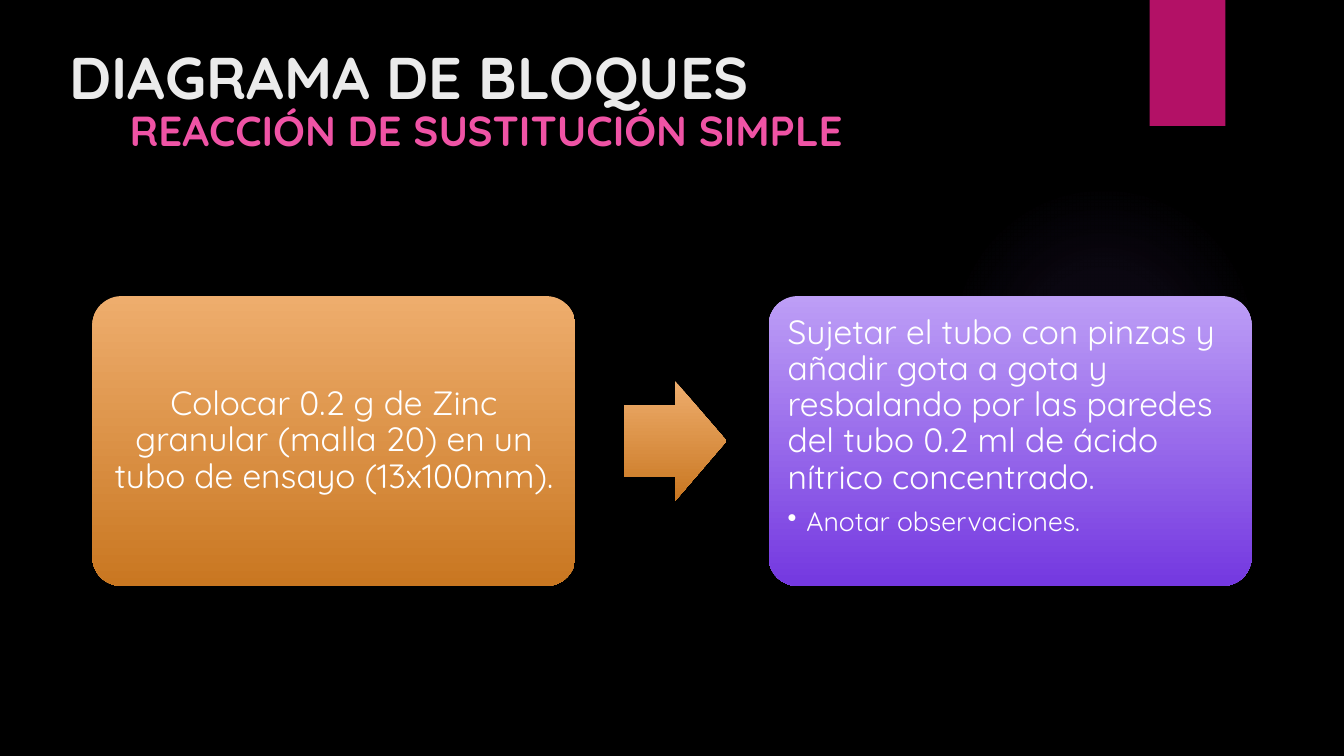
from lxml import etree
from pptx import Presentation
from pptx.dml.color import RGBColor
from pptx.enum.shapes import MSO_SHAPE
from pptx.enum.text import MSO_ANCHOR, PP_ALIGN
from pptx.oxml import parse_xml
from pptx.oxml.ns import qn
from pptx.util import Pt

PX = 9525
FONT = "Quicksand"
OVAL, RECT = MSO_SHAPE.OVAL, MSO_SHAPE.RECTANGLE
ROUND, ARROW = MSO_SHAPE.ROUNDED_RECTANGLE, MSO_SHAPE.RIGHT_ARROW
TOP, MIDDLE, BOTTOM = MSO_ANCHOR.TOP, MSO_ANCHOR.MIDDLE, MSO_ANCHOR.BOTTOM
LEFT, CENTER = PP_ALIGN.LEFT, PP_ALIGN.CENTER
COLORS = {
    "black": "000000", "white": "FFFFFF", "title": "EBEBEB", "pink": "EF53A5",
    "magenta": "B31166", "glow": "9B6BF2",
    "orange_top": "EEAD6D", "orange_bottom": "C97721",
    "violet_top": "BD9EF6", "violet_bottom": "7438E0",
}
ORANGE = ("orange_top", "orange_bottom")
VIOLET = ("violet_top", "violet_bottom")


def add_shape(kind, x, y, w, h, colors, adj=()):
    sp = s.shapes.add_shape(kind, x * PX, y * PX, w * PX, h * PX)
    sp.shadow.inherit = False
    sp.line.fill.background()
    for i, value in enumerate(adj):
        sp.adjustments[i] = value
    if len(colors) == 1:
        sp.fill.solid()
        sp.fill.fore_color.rgb = RGBColor.from_string(COLORS[colors[0]])
    else:
        sp.fill.gradient()
        sp.fill.gradient_angle = 270
        for stop, name in zip(sp.fill.gradient_stops, colors):
            stop.color.rgb = RGBColor.from_string(COLORS[name])
    return sp


def write(tf, text, size=24, color="white", bold=False, align=LEFT,
          spacing=1.0, after=0, bullet=False):
    p = tf.paragraphs[0] if not tf.text else tf.add_paragraph()
    if bullet:
        p.level = 1
        pPr = p._p.get_or_add_pPr()
        pPr.set("marL", str(18 * PX))
        pPr.set("indent", str(-18 * PX))
        etree.SubElement(pPr, qn("a:buChar")).set("char", "•")
    p.alignment = align
    p.line_spacing = spacing
    p.space_after = Pt(after)
    r = p.add_run()
    r.text = text
    r.font.name = FONT
    r.font.size = Pt(size)
    r.font.bold = bold
    r.font.color.rgb = RGBColor.from_string(COLORS[color])


prs = Presentation()
prs.slide_width, prs.slide_height = 1280 * PX, 720 * PX
s = prs.slides.add_slide(prs.slide_layouts[6])
s.background.fill.solid()
s.background.fill.fore_color.rgb = RGBColor.from_string(COLORS["black"])

glow = add_shape(OVAL, 903, 176, 296, 296, ["glow"])
stops = "".join(
    f'<a:gs pos="{pos * 1000}"><a:srgbClr val="{COLORS["glow"]}">'
    f'<a:alpha val="{alpha * 1000}"/></a:srgbClr></a:gs>'
    for pos, alpha in [(0, 7), (36, 6), (69, 0)])
spPr = glow._element.spPr
spPr.replace(spPr.find(qn("a:solidFill")), parse_xml(
    '<a:gradFill xmlns:a="http://schemas.openxmlformats.org/drawingml/2006/main">'
    f'<a:gsLst>{stops}</a:gsLst><a:path path="circle">'
    '<a:fillToRect l="50000" t="50000" r="50000" b="50000"/></a:path></a:gradFill>'))

add_shape(RECT, 1095, 0, 72, 120, ["magenta"])

headings = [
    ("REACCIÓN DE SUSTITUCIÓN SIMPLE", 114, 92, 990, 60, BOTTOM, 30, "pink"),
    ("DIAGRAMA DE BLOQUES", 57, 34, 988, 147, TOP, 42, "title"),
]
for text, x, y, w, h, anchor, size, color in headings:
    tf = s.shapes.add_textbox(x * PX, y * PX, w * PX, h * PX).text_frame
    tf.word_wrap = True
    tf.vertical_anchor = anchor
    write(tf, text, size=size, color=color, bold=True)

add_shape(ARROW, 594, 363, 98, 114, ORANGE, adj=(0.6, 0.5))

steps = [
    (88, ORANGE, MIDDLE, CENTER,
     "Colocar 0.2 g de Zinc granular (malla 20) en un tubo de ensayo (13x100mm).", ""),
    (732, VIOLET, TOP, LEFT,
     "Sujetar el tubo con pinzas y añadir gota a gota y resbalando por las paredes "
     "del tubo 0.2 ml de ácido nítrico concentrado.", "Anotar observaciones."),
]
for x, colors, anchor, align, text, note in steps:
    tf = add_shape(ROUND, x, 282, 460, 276, colors, adj=(0.1,)).text_frame
    tf.word_wrap = True
    tf.vertical_anchor = anchor
    tf.margin_left = tf.margin_right = tf.margin_top = tf.margin_bottom = 10 * PX
    write(tf, text, align=align, spacing=0.9, after=8.4 if note else 0)
    if note:
        write(tf, note, size=19, spacing=0.9, bullet=True)

prs.save("out.pptx")
